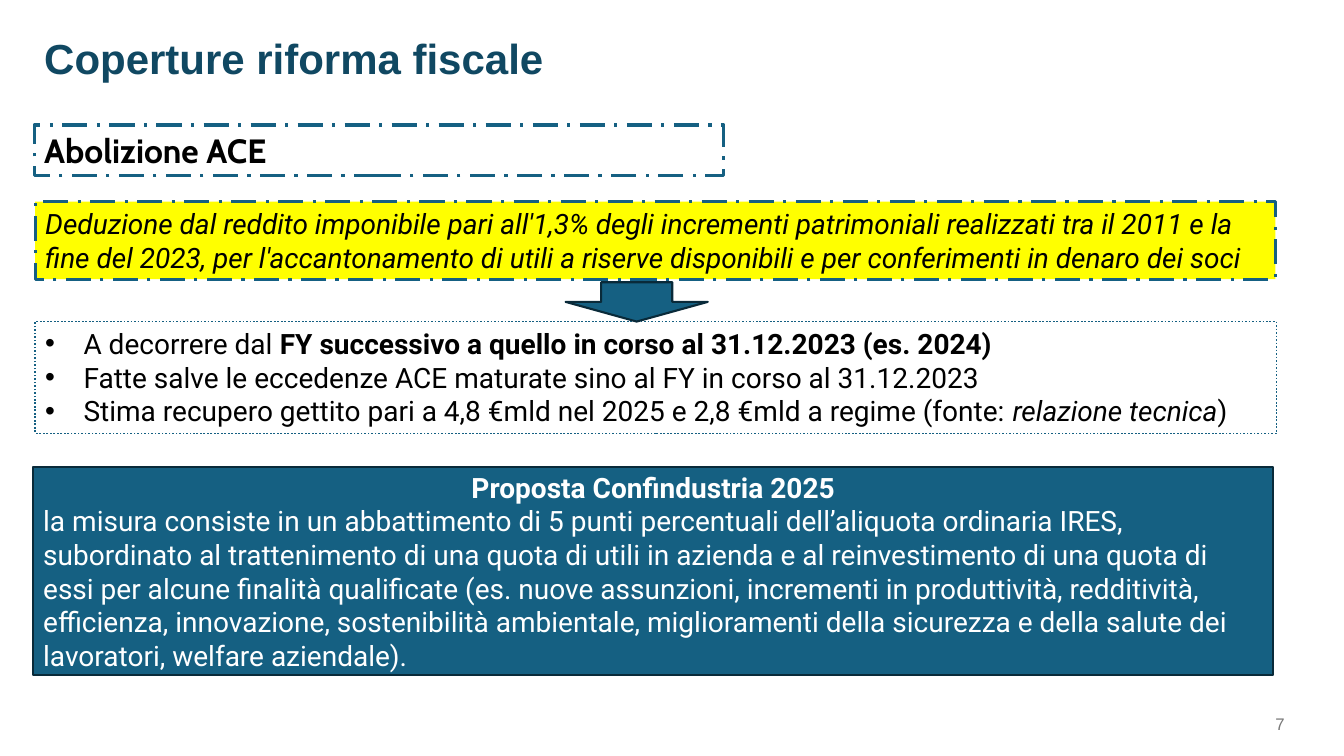
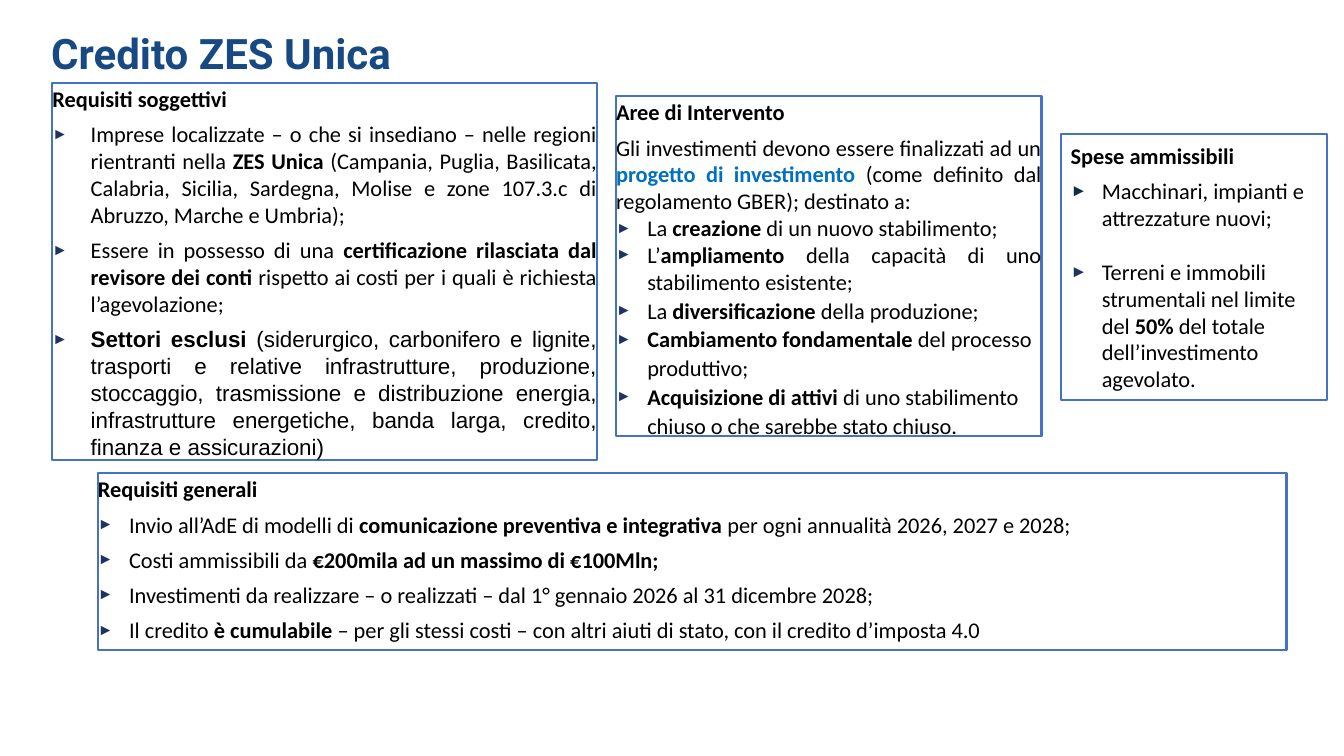
from pptx import Presentation
from pptx.dml.color import RGBColor
from pptx.enum.dml import MSO_LINE as Dash
from pptx.enum.shapes import MSO_SHAPE as Shape
from pptx.enum.text import MSO_ANCHOR as Anchor, PP_ALIGN as Align
from pptx.util import Inches, Pt
from lxml import etree

# Theme: colours, type sizes, box and paragraph styles
THEME = dict(
    black="000000", white="FFFFFF", teal="156082", edge="092A39",
    yellow="FFFF00", frame="4472C4", link="0070C0", grey="797979",
    bullet="203262", bullet_dark="0B3041",
    title_teal="104862", title_blue="174983",
    title=30, heading=24, body=20, small=16, page=12,
)
B, I = dict(bold=True), dict(italic=True)
BLUE = dict(bold=True, color="link")

BOX = {
    "heading": dict(line=("teal", 2.25, Dash.LONG_DASH_DOT)),
    "highlight": dict(fill="yellow", line=("teal", 2.25, Dash.LONG_DASH_DOT)),
    "dotted": dict(line=("teal", 1.25, Dash.ROUND_DOT)),
    "solid": dict(fill="teal", line=("edge", 1.5, None), anchor=Anchor.MIDDLE),
    "tight": dict(line=("frame", 1.5, None), inset=0),
    "padded": dict(line=("frame", 1.5, None)),
}
FONT = {
    "heading": dict(name="Cabin", size="heading", bold=True),
    "body": dict(name="Roboto", size="body"),
    "body_white": dict(name="Roboto", size="body", color="white"),
    "small": dict(name="Calibri", size="small"),
    "page": dict(name="Arial", size="page", color="grey"),
}

# Paragraph styles: format values, then bullet as (char, indent, colour, size %)
ARROW = ("►", 0.31, "bullet", 70)
WIDE_ARROW = ("►", 0.38, "bullet", 70)
SPESE_ARROW = ("►", 0.31, "bullet_dark", 75)
TERRENI_ARROW = ("►", 0.31, "bullet", 75)
JUST = dict(alignment=Align.JUSTIFY)
JUST_GAP = dict(JUST, space_after=Pt(6))
PARA = {
    "plain": ({}, None),
    "center": (dict(alignment=Align.CENTER), None),
    "right": (dict(alignment=Align.RIGHT), None),
    "justified": (JUST, None),
    "dot": (JUST, ("•", 0.38, "black", 100)),
    "label": (dict(line_spacing=1.1, space_after=Pt(6)), None),
    "wide_item": (JUST_GAP, WIDE_ARROW),
    "gap_item": (JUST_GAP, ARROW),
    "item": (JUST, ARROW),
    "loose_item": (dict(line_spacing=1.07), ARROW),
    "spese_item": ({}, SPESE_ARROW),
    "terreni_item": (dict(space_before=Pt(19.5)), TERRENI_ARROW),
}

# Content: each box is (box style, font, place, paragraphs);
# a paragraph is (style, runs...), a run is text or (text, format)
COPERTURE = [
    ("heading", "heading", (0.34, 1.24, 6.84, 0.5), [("plain", "Abolizione ACE")]),
    ("dotted", "body", (0.35, 3.19, 12.31, 1.11), [
        ("dot", "A decorrere dal ",
         ("FY successivo a quello in corso al 31.12.2023 (es. 2024)", B)),
        ("dot", "Fatte salve le eccedenze ACE maturate sino al FY in corso al 31.12.2023"),
        ("dot", "Stima recupero gettito pari a 4,8 €mld nel 2025 e 2,8 €mld a regime (fonte: ",
         ("relazione tecnica", I), ")"),
    ]),
    ("solid", "body_white", (0.33, 4.63, 12.3, 2.07), [
        ("center", ("Proposta Confindustria 2025", B)),
        ("plain", "la misura consiste in un abbattimento di 5 punti percentuali "
         "dell’aliquota ordinaria IRES, subordinato al trattenimento di una quota di utili "
         "in azienda e al reinvestimento di una quota di essi per alcune finalità "
         "qualificate (es. nuove assunzioni, incrementi in produttività, redditività, "
         "efficienza, innovazione, sostenibilità ambientale, miglioramenti della sicurezza "
         "e della salute dei lavoratori, welfare aziendale)."),
    ]),
    ("highlight", "body", (0.35, 2, 12.3, 0.77), [
        ("plain", ("Deduzione dal reddito imponibile pari all'1,3% degli incrementi "
                   "patrimoniali realizzati tra il 2011 e la fine del 2023, per "
                   "l'accantonamento di utili a riserve disponibili e per conferimenti "
                   "in denaro dei soci", I)),
    ]),
]
ZES = [
    ("tight", "small", (0.52, 0.82, 5.4, 3.74), [
        ("label", ("Requisiti soggettivi", B)),
        ("wide_item", "Imprese localizzate – o che si insediano – nelle regioni rientranti nella ",
         ("ZES Unica ", B),
         "(Campania, Puglia, Basilicata, Calabria, Sicilia, Sardegna, Molise e zone "
         "107.3.c di Abruzzo, Marche e Umbria);"),
        ("wide_item", "Essere in possesso di una ",
         ("certificazione rilasciata dal revisore dei conti", B),
         " rispetto ai costi per i quali è richiesta l’agevolazione;"),
        ("wide_item", ("Settori esclusi ", dict(B, name="Arial")),
         ("(siderurgico, carbonifero e lignite, trasporti e relative infrastrutture, "
          "produzione, stoccaggio, trasmissione e distribuzione energia, infrastrutture "
          "energetiche, banda larga, credito, finanza e assicurazioni)", dict(name="Arial"))),
    ]),
    ("tight", "small", (6.11, 0.95, 4.22, 3.38), [
        ("label", ("Aree di Intervento", B)),
        ("justified", "Gli investimenti devono essere finalizzati ad un ",
         ("progetto di investimento ", BLUE),
         "(come definito dal regolamento GBER); destinato a:"),
        ("item", "La ", ("creazione", B), " di un nuovo stabilimento;"),
        ("item", "L’", ("ampliamento", B), " della capacità di uno stabilimento esistente;"),
        ("loose_item", "La ", ("diversificazione", B), " della produzione;"),
        ("loose_item", ("Cambiamento fondamentale", B), " del processo produttivo;"),
        ("loose_item", ("Acquisizione di attivi ", B),
         "di uno stabilimento chiuso o che sarebbe stato chiuso."),
    ]),
    ("padded", "small", (10.52, 1.33, 2.64, 2.64), [
        ("label", ("Spese ammissibili", B)),
        ("spese_item", "Macchinari, impianti e attrezzature nuovi;"),
        ("terreni_item", "Terreni e immobili strumentali nel limite del ", ("50%", B),
         " del totale dell’investimento agevolato."),
    ]),
    ("tight", "small", (0.97, 4.69, 11.79, 1.76), [
        ("label", ("Requisiti generali", B)),
        ("gap_item", "Invio all’AdE di modelli di ",
         ("comunicazione preventiva e integrativa ", B),
         "per ogni annualità 2026, 2027 e 2028;"),
        ("gap_item", "Costi ammissibili da ", ("€200mila ad un massimo di €100Mln;", B)),
        ("gap_item", "Investimenti da realizzare – o realizzati – dal 1° gennaio 2026 "
         "al 31 dicembre 2028;"),
        ("gap_item", "Il credito ", ("è cumulabile ", B),
         "– per gli stessi costi – con altri aiuti di stato, con il credito d’imposta 4.0"),
    ]),
]
SLIDES = [
    dict(title="Coperture riforma fiscale", place=(0.34, 0.27, 6.09, 0.61),
         font=dict(name="Arial", color="title_teal"), boxes=COPERTURE,
         arrow=(5.61, 2.8, 1.41, 0.39), page="7"),
    dict(title="Credito ZES Unica", place=(0.41, 0.22, 8.21, 0.61),
         font=dict(name="Roboto", color="title_blue"), boxes=ZES),
]


def rgb(name):
    return RGBColor.from_string(THEME[name])


def add_bullet(p, char, indent, color, percent):
    pPr = p._p.get_or_add_pPr()
    pPr.set("marL", str(Inches(indent)))
    pPr.set("indent", str(-Inches(indent)))
    ns = pPr.nsmap["a"]

    def add(parent, tag, **attrs):
        return etree.SubElement(parent, f"{{{ns}}}{tag}", **attrs)

    add(add(pPr, "buClr"), "srgbClr", val=THEME[color])
    add(pPr, "buSzPct", val=str(percent * 1000))
    add(pPr, "buFont", typeface="Arial")
    add(pPr, "buChar", char=char)


def write(tf, paragraphs, font):
    tf.word_wrap = True
    for n, (style, *runs) in enumerate(paragraphs):
        p = tf.paragraphs[0] if n == 0 else tf.add_paragraph()
        values, bullet = PARA[style]
        if bullet:
            add_bullet(p, *bullet)
        for key, value in {"alignment": Align.LEFT, **values}.items():
            setattr(p, key, value)
        for run in runs:
            text, extra = (run, {}) if isinstance(run, str) else run
            r = p.add_run()
            r.text = text
            look = {"color": "black", "bold": False, "italic": False, **font, **extra}
            r.font.color.rgb = rgb(look.pop("color"))
            r.font.size = Pt(THEME[look.pop("size")])
            for key, value in look.items():
                setattr(r.font, key, value)


def add_text(s, place, paragraphs, font, anchor=Anchor.TOP):
    tf = s.shapes.add_textbox(*map(Inches, place)).text_frame
    tf.vertical_anchor = anchor
    write(tf, paragraphs, font)


def add_box(s, place, line, fill=None, anchor=Anchor.TOP, inset=None, kind=Shape.RECTANGLE):
    sp = s.shapes.add_shape(kind, *map(Inches, place))
    sp.shadow.inherit = False
    if fill:
        sp.fill.solid()
        sp.fill.fore_color.rgb = rgb(fill)
    else:
        sp.fill.background()
    color, width, dash = line
    sp.line.color.rgb = rgb(color)
    sp.line.width = Pt(width)
    if dash:
        sp.line.dash_style = dash
    tf = sp.text_frame
    tf.vertical_anchor = anchor
    if inset is not None:
        for side in ("left", "top", "right", "bottom"):
            setattr(tf, f"margin_{side}", Inches(inset))
    return tf


def build_slide(prs, title, place, font, boxes, arrow=None, page=None):
    s = prs.slides.add_slide(prs.slide_layouts[6])
    add_text(s, place, [("plain", title)], dict(font, size="title", bold=True))
    for style, box_font, box_place, paragraphs in boxes:
        write(add_box(s, box_place, **BOX[style]), paragraphs, FONT[box_font])
    if arrow:
        add_box(s, arrow, kind=Shape.DOWN_ARROW, **BOX["solid"])
    if page:
        add_text(s, (9.42, 7.01, 3.42, 0.35), [("right", page)], FONT["page"], Anchor.MIDDLE)


def main():
    prs = Presentation()
    prs.slide_width, prs.slide_height = Inches(13.33), Inches(7.5)
    for slide in SLIDES:
        build_slide(prs, **slide)
    prs.save("out.pptx")


if __name__ == "__main__":
    main()
